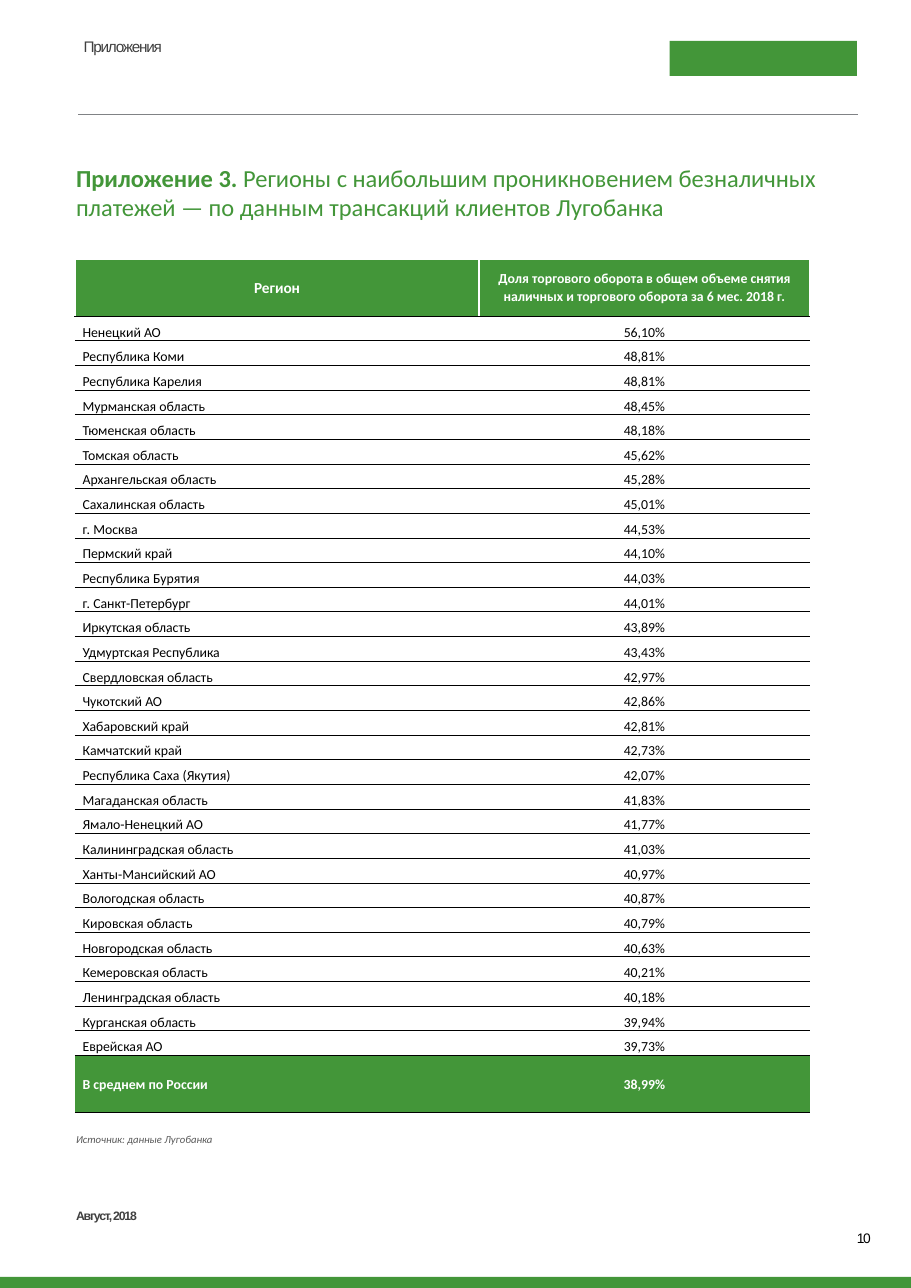
from lxml import etree
from pptx import Presentation
from pptx import util as u
from pptx.dml.color import RGBColor
from pptx.enum import shapes, text
from pptx.oxml.ns import qn

GREEN, GREY, WHITE, BLACK = "439639", "404040", "FFFFFF", "000000"
W, H = u.Inches(8.27), u.Inches(11.69)
AVERAGE = ("В среднем по России", "38,99%")
REGIONS = [
    ("Ненецкий АО", "56,10%"), ("Республика Коми", "48,81%"),
    ("Республика Карелия", "48,81%"), ("Мурманская область", "48,45%"),
    ("Тюменская область", "48,18%"), ("Томская область", "45,62%"),
    ("Архангельская область", "45,28%"), ("Сахалинская область", "45,01%"),
    ("г. Москва", "44,53%"), ("Пермский край", "44,10%"),
    ("Республика Бурятия", "44,03%"), ("г. Санкт-Петербург", "44,01%"),
    ("Иркутская область", "43,89%"), ("Удмуртская Республика", "43,43%"),
    ("Свердловская область", "42,97%"), ("Чукотский АО", "42,86%"),
    ("Хабаровский край", "42,81%"), ("Камчатский край", "42,73%"),
    ("Республика Саха (Якутия)", "42,07%"), ("Магаданская область", "41,83%"),
    ("Ямало-Ненецкий АО", "41,77%"), ("Калининградская область", "41,03%"),
    ("Ханты-Мансийский АО", "40,97%"), ("Вологодская область", "40,87%"),
    ("Кировская область", "40,79%"), ("Новгородская область", "40,63%"),
    ("Кемеровская область", "40,21%"), ("Ленинградская область", "40,18%"),
    ("Курганская область", "39,94%"), ("Еврейская АО", "39,73%"),
]
HEADER = ("Регион", "Доля торгового оборота в общем объеме снятия "
          "наличных и торгового оборота за 6 мес. 2018 г.")


def add_run(p, words, size, color, font="Calibri", bold=False, italic=False, spacing=0):
    """Append a formatted run; spacing is the letter spacing in points."""
    r = p.add_run()
    r.text = words
    r.font.size, r.font.name = u.Pt(size), font
    r.font.bold, r.font.italic = bold, italic
    r.font.color.rgb = RGBColor.from_string(color)
    if spacing:
        r.font._element.set("spc", str(round(spacing * 100)))


def add_border(cell, side, color, width):
    """Draw one cell border; side is L, R, T or B, called in that order before the fill."""
    ln = etree.SubElement(cell._tc.get_or_add_tcPr(), qn(f"a:ln{side}"), w=str(u.Pt(width)))
    fill = etree.SubElement(ln, qn("a:solidFill"))
    etree.SubElement(fill, qn("a:srgbClr"), val=color)


prs = Presentation()
prs.slide_width, prs.slide_height = W, H
s = prs.slides.add_slide(prs.slide_layouts[5])

# Plain block in the header and the band along the bottom edge
for left, top, width, height in [
    (u.Inches(6.08), u.Inches(0.37), u.Inches(1.7), u.Inches(0.32)),
    (0, u.Inches(11.59), W, H - u.Inches(11.59)),
]:
    sp = s.shapes.add_shape(shapes.MSO_SHAPE.RECTANGLE, left, top, width, height)
    sp.shadow.inherit = False
    sp.fill.solid()
    sp.fill.fore_color.rgb = RGBColor.from_string(GREEN)
    sp.line.fill.background()

rule = s.shapes.add_connector(shapes.MSO_CONNECTOR.STRAIGHT, u.Inches(0.71), u.Inches(1.04),
                              u.Inches(7.79), u.Inches(1.04))
rule.line.color.rgb = RGBColor.from_string("808285")
rule.line.width = u.Pt(0.5)
etree.SubElement(rule._element.spPr, qn("a:effectLst"))

title = s.shapes.title
title.left, title.top = u.Inches(0.69), u.Inches(1.47)
title.width, title.height = u.Inches(6.85), u.Inches(0.55)
tf = title.text_frame
tf.auto_size, tf.word_wrap = text.MSO_AUTO_SIZE.NONE, True
tf.vertical_anchor = text.MSO_ANCHOR.TOP
tf.margin_left = tf.margin_right = tf.margin_bottom = 0
tf.margin_top = u.Inches(0.01)
p = tf.paragraphs[0]
p.alignment = text.PP_ALIGN.LEFT
add_run(p, "Приложение 3. ", 16, GREEN, bold=True)
add_run(p, "Регионы с наибольшим проникновением безналичных платежей — "
           "по данным трансакций клиентов Лугобанка", 16, GREEN)

# Running head, source, date and page number
for left, top, width, height, before, words, style in [
    (0.76, 0.33, 3.56, 0.18, 1, "Приложения",
     dict(size=10, color=GREY, font="Arial", spacing=-0.8)),
    (0.69, 10.27, 6.35, 0.14, 0, "Источник: данные Лугобанка",
     dict(size=7, color="595959", italic=True)),
    (0.69, 10.96, 1.99, 0.15, 1, "Август, 2018",
     dict(size=8, color=GREY, font="Arial", bold=True, spacing=-0.8)),
    (7.78, 11.15, 0.2, 0.16, 0.9, "10",
     dict(size=9, color=BLACK, font="Arial", spacing=-0.9)),
]:
    box = s.shapes.add_textbox(*map(u.Inches, (left, top, width, height)))
    tf = box.text_frame
    tf.word_wrap = True
    tf.margin_left = tf.margin_right = tf.margin_bottom = 0
    tf.margin_top = u.Inches(0.01)
    p = tf.paragraphs[0]
    p.space_before = u.Pt(before)
    add_run(p, words, **style)

rows = [HEADER, *REGIONS, AVERAGE]
last = len(rows) - 1
table = s.shapes.add_table(len(rows), 2, u.Inches(0.68), u.Inches(2.35),
                           u.Inches(6.67), u.Inches(7.76)).table
NO_STYLE_NO_GRID = "{2D5ABB26-0587-4C30-8999-92F81FD0307C}"
table._tbl.tblPr.find(qn("a:tableStyleId")).text = NO_STYLE_NO_GRID
table.horz_banding = False
table.columns[0].width, table.columns[1].width = u.Inches(3.67), u.Inches(3)

tall = u.Inches(0.52)
low = (u.Inches(7.76) - 2 * tall) // len(REGIONS)
for i, row in enumerate(rows):
    accent = i in (0, last)
    table.rows[i].height = tall if accent else low
    for j, words in enumerate(row):
        cell = table.cell(i, j)
        cell.margin_left = cell.margin_right = u.Inches(0.07)
        cell.margin_top = cell.margin_bottom = 0
        cell.vertical_anchor = text.MSO_ANCHOR.MIDDLE if accent else text.MSO_ANCHOR.BOTTOM
        if i == 0:
            for side in "LRT":
                add_border(cell, side, WHITE, 1)
        else:
            add_border(cell, "T", BLACK, 1 if i == 1 else 0.5)
        add_border(cell, "B", BLACK, 1 if accent else 0.5)
        if accent:
            cell.fill.solid()
            cell.fill.fore_color.rgb = RGBColor.from_string(GREEN)
        else:
            cell.fill.background()
        p = cell.text_frame.paragraphs[0]
        p.line_spacing = 1.07
        p.alignment = text.PP_ALIGN.CENTER if i == 0 or j == 1 else text.PP_ALIGN.LEFT
        add_run(p, words, 10 if i == j == 0 else 9, WHITE if accent else BLACK, bold=accent)

prs.save("out.pptx")
